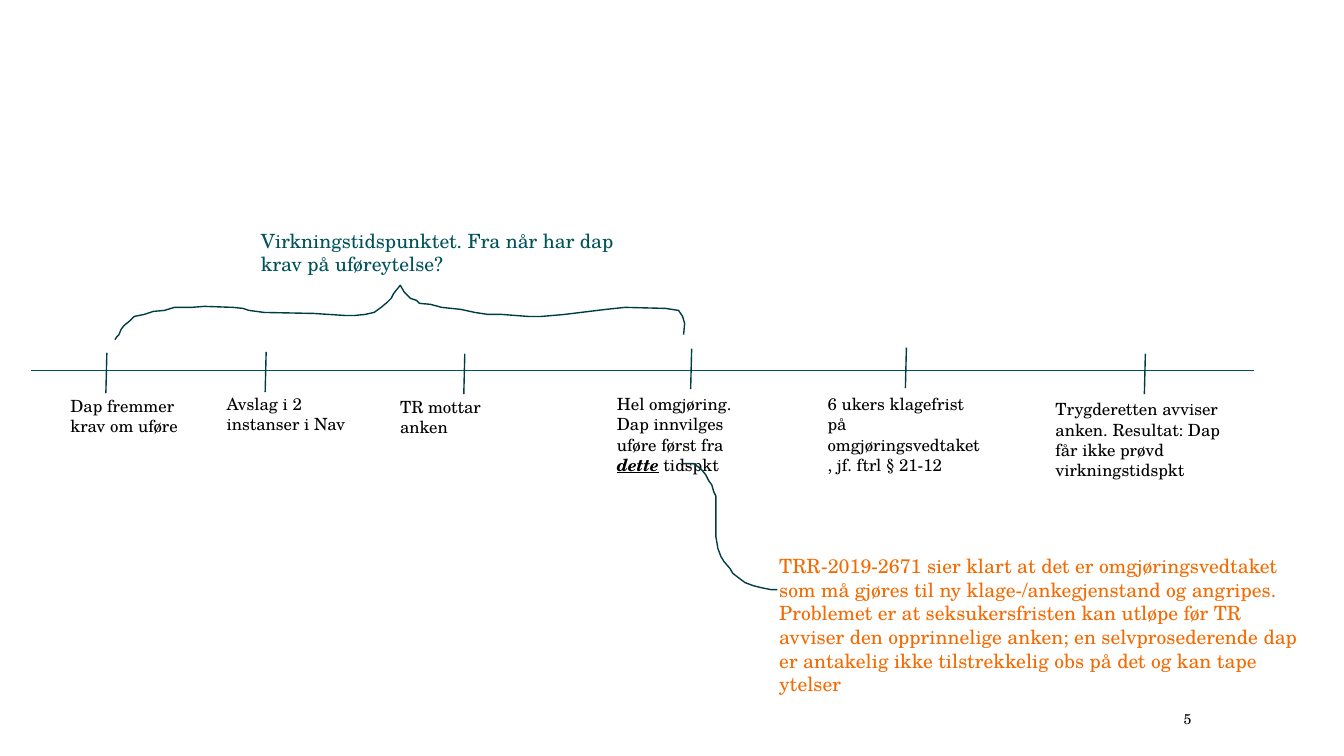
from lxml.etree import SubElement
from pptx import Presentation
from pptx.dml.color import RGBColor
from pptx.enum.shapes import MSO_CONNECTOR
from pptx.enum.text import MSO_ANCHOR
from pptx.oxml.ns import qn
from pptx.util import Inches, Pt

BLACK = RGBColor(0x00, 0x00, 0x00)
TEAL = RGBColor(0x00, 0x53, 0x5B)
DARK_TEAL = RGBColor(0x00, 0x3D, 0x43)
ORANGE = RGBColor(0xF3, 0x6A, 0x00)

TICK_HEIGHT = 0.4
TICK_SLANT = 0.01

# Tick (left, top), label box (left, top, width, height), label lines of (text, emphasised) runs
MILESTONES = [
    ((1.05, 3.5), (0.6, 3.88, 1.29, 0.5), [[("Dap fremmer krav om uføre", False)]]),
    ((2.63, 3.49), (2.15, 3.86, 1.5, 0.5), [[("Avslag i 2 instanser i Nav", False)]]),
    ((4.6, 3.51), (3.87, 3.89, 1.47, 0.5), [[("TR mottar anken", False)]]),
    ((6.85, 3.46), (6.02, 3.86, 1.68, 0.91),
     [[("Hel omgjøring. ", False)],
      [("Dap innvilges uføre først fra ", False), ("dette", True), (" tidspkt", False)]]),
    ((8.98, 3.45), (8.11, 3.86, 1.74, 0.91),
     [[("6 ukers klagefrist på omgjøringsvedtaket, jf. ftrl § 21-12", False)]]),
    ((11.35, 3.51), (10.37, 3.91, 1.96, 0.91),
     [[("Trygderetten avviser anken. Resultat: Dap får ikke prøvd virkningstidspkt", False)]]),
]

BRACE = [
    (1.14, 3.37), (1.16, 3.34), (1.18, 3.32), (1.2, 3.27), (1.23, 3.23), (1.28, 3.19),
    (1.33, 3.14), (1.43, 3.12), (1.49, 3.1), (1.52, 3.09), (1.63, 3.08), (1.73, 3.05),
    (1.9, 3.05), (2.03, 3.04), (2.31, 3.05), (2.41, 3.06), (2.47, 3.08), (2.62, 3.1),
    (3.11, 3.11), (3.42, 3.13), (3.52, 3.13), (3.62, 3.12), (3.71, 3.1), (3.78, 3.05),
    (3.84, 3.0), (3.88, 2.96), (3.9, 2.92), (3.93, 2.88), (3.97, 2.83), (4.01, 2.9),
    (4.07, 2.96), (4.13, 2.98), (4.16, 3.01), (4.27, 3.02), (4.38, 3.05), (4.57, 3.07),
    (4.71, 3.1), (4.84, 3.12), (4.98, 3.12), (5.11, 3.13), (5.24, 3.14), (5.37, 3.14),
    (5.6, 3.12), (5.76, 3.1), (6.01, 3.07), (6.2, 3.05), (6.6, 3.06), (6.73, 3.08),
    (6.77, 3.14), (6.79, 3.21), (6.78, 3.32),
]

CALLOUT_CURVE = [
    (6.77, 4.6), (6.88, 4.6), (6.95, 4.65), (7.0, 4.71), (7.03, 4.77), (7.06, 4.81),
    (7.08, 4.88), (7.1, 4.92), (7.1, 5.32), (7.12, 5.44), (7.15, 5.52), (7.18, 5.57),
    (7.24, 5.64), (7.27, 5.69), (7.35, 5.75), (7.39, 5.78), (7.47, 5.81), (7.55, 5.83),
    (7.65, 5.85), (7.71, 5.85),
]


class TimelineSlide:
    font_name = "TeX Gyre Schola"

    def __init__(self, presentation):
        self.slide = presentation.slides.add_slide(presentation.slide_layouts[6])

    def text(self, box, lines, size, color):
        """Add a text box; each line is a list of (text, emphasised) runs."""
        shape = self.slide.shapes.add_textbox(*map(Inches, box))
        frame = shape.text_frame
        frame.word_wrap = True
        paragraph = frame.paragraphs[0]
        for index, line in enumerate(lines):
            if index:
                paragraph.add_line_break()
            for text, emphasised in line:
                run = paragraph.add_run()
                run.text = text
                font = run.font
                font.name, font.size, font.color.rgb = self.font_name, Pt(size), color
                if emphasised:
                    font.bold = font.italic = font.underline = True
        return frame

    def axis(self, left, right, top):
        connector = self.slide.shapes.add_connector(
            MSO_CONNECTOR.STRAIGHT, Inches(left), Inches(top), Inches(right), Inches(top))
        connector.line.color.rgb = TEAL
        connector.line.width = Pt(0.5)
        SubElement(connector._element.spPr, qn("a:effectLst"))

    def stroke(self, points):
        """Draw an open, unfilled pen stroke through the points."""
        start, *rest = [(Inches(x), Inches(y)) for x, y in points]
        builder = self.slide.shapes.build_freeform(*start)
        builder.add_line_segments(rest, close=False)
        shape = builder.convert_to_shape()
        shape.shadow.inherit = False
        shape.fill.background()
        shape.line.color.rgb = DARK_TEAL
        shape.line.width = Pt(1)

    def milestone(self, tick, label_box, label):
        left, top = tick
        self.stroke([(left + TICK_SLANT, top), (left, top + TICK_HEIGHT)])
        self.text(label_box, label, 12, BLACK)

    def slide_number(self, number):
        frame = self.text((11.74, 7.01, 0.62, 0.25), [[(number, False)]], 10.2, BLACK)
        frame.margin_left = frame.margin_right = 0
        frame.margin_top = frame.margin_bottom = Inches(0.04)
        frame.vertical_anchor = MSO_ANCHOR.MIDDLE


def main():
    presentation = Presentation()
    presentation.slide_width = Inches(13.33)
    presentation.slide_height = Inches(7.5)

    timeline = TimelineSlide(presentation)
    timeline.slide_number("5")
    timeline.axis(0.31, 12.44, 3.67)
    for tick, label_box, label in MILESTONES:
        timeline.milestone(tick, label_box, label)
    timeline.text(
        (2.49, 2.22, 3.86, 0.57),
        [[("Virkningstidspunktet. Fra når har dap krav på uføreytelse?", False)]], 14, TEAL)
    timeline.text(
        (7.63, 5.45, 5.41, 1.5),
        [[("TRR-2019-2671 sier klart at det er omgjøringsvedtaket som må gjøres til ny "
           "klage-/ankegjenstand og angripes. Problemet er at seksukersfristen kan utløpe "
           "før TR avviser den opprinnelige anken; en selvprosederende dap er antakelig "
           "ikke tilstrekkelig obs på det og kan tape ytelser", False)]], 14, ORANGE)
    timeline.stroke(BRACE)
    timeline.stroke(CALLOUT_CURVE)

    presentation.save("out.pptx")


if __name__ == "__main__":
    main()
